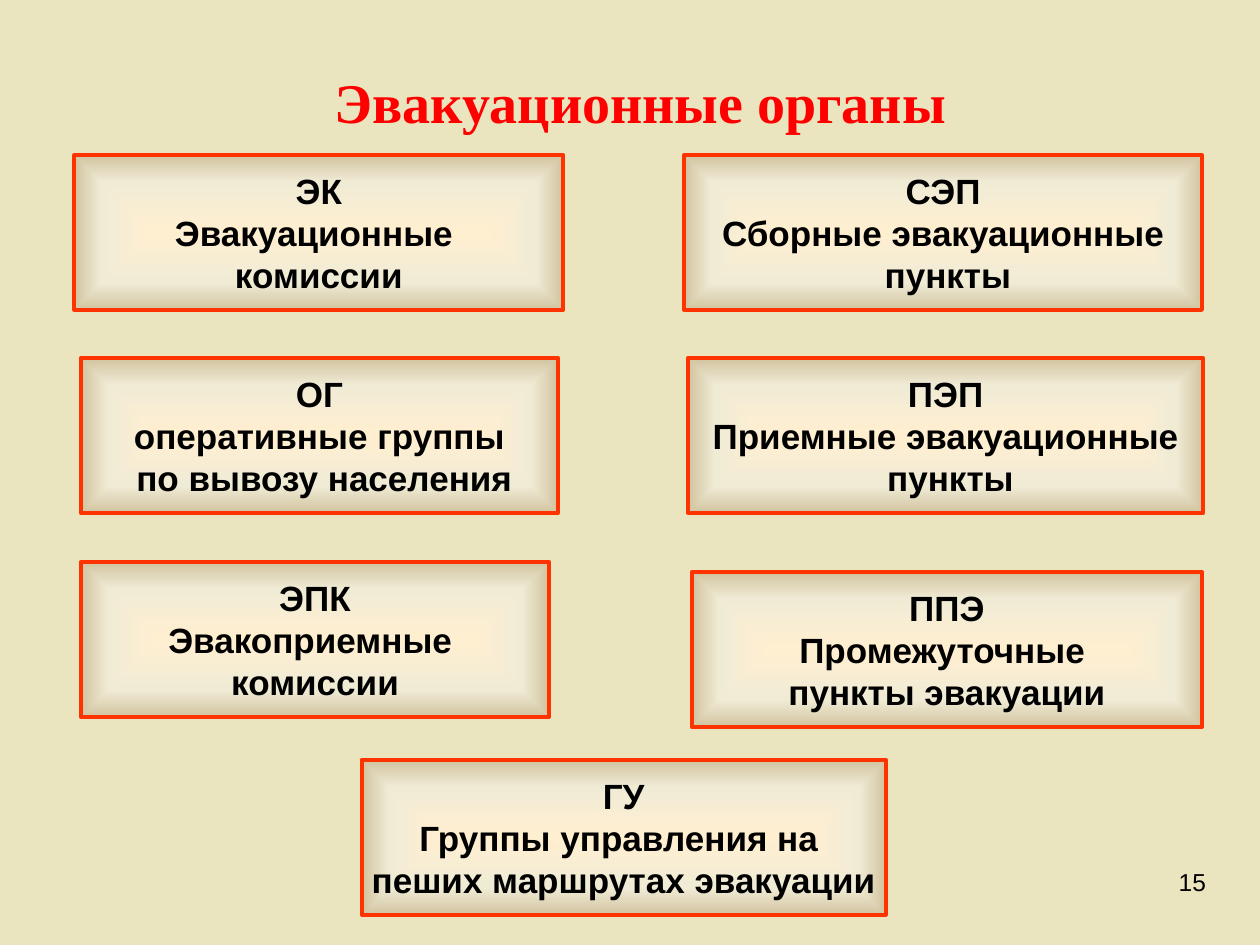
from pptx import Presentation
from pptx.dml.color import RGBColor
from pptx.enum.shapes import MSO_SHAPE
from pptx.enum.text import MSO_ANCHOR, PP_ALIGN
from pptx.oxml import parse_xml
from pptx.oxml.ns import nsdecls, qn
from pptx.util import Inches, Pt

BOX_HEIGHT = 1.23
GRADIENT = f"""<a:gradFill {nsdecls('a')} rotWithShape="1"><a:gsLst>
<a:gs pos="0"><a:srgbClr val="FFEFD1"/></a:gs>
<a:gs pos="65000"><a:srgbClr val="F0EBD5"/></a:gs>
<a:gs pos="100000"><a:srgbClr val="D1C39F"/></a:gs>
</a:gsLst><a:path path="shape">
<a:fillToRect l="50000" t="50000" r="50000" b="50000"/>
</a:path></a:gradFill>"""


def rgb(value):
    return RGBColor.from_string(value)


def write(tf, text, size=20, font="Arial", color="000000", bold=False,
          align=PP_ALIGN.CENTER, anchor=MSO_ANCHOR.MIDDLE, wrap=True):
    """Fill a text frame, one paragraph for each line of text."""
    tf.word_wrap = wrap
    tf.vertical_anchor = anchor
    for i, line in enumerate(text.split("\n")):
        p = tf.paragraphs[0] if i == 0 else tf.add_paragraph()
        p.alignment = align
        r = p.add_run()
        r.text = line
        r.font.size = Pt(size)
        r.font.name = font
        r.font.bold = bold
        r.font.color.rgb = rgb(color)


prs = Presentation()
prs.slide_width, prs.slide_height = Inches(10), Inches(7.5)
slide = prs.slides.add_slide(prs.slide_layouts[5])
slide.background.fill.solid()
slide.background.fill.fore_color.rgb = rgb("EBE5BF")

title = slide.shapes.title
title.left, title.top = Inches(0.5), Inches(0.27)
title.width, title.height = Inches(9.17), Inches(1.57)
title.text_frame.margin_bottom = Inches(0.55)
write(title.text_frame, "Эвакуационные органы", size=32,
      font="Times New Roman", color="FF0000", bold=True)

number = slide.shapes.add_textbox(Inches(7.59), Inches(6.83), Inches(2.08), Inches(0.52))
write(number.text_frame, "15", size=14, align=PP_ALIGN.RIGHT, anchor=MSO_ANCHOR.TOP)

# left, top, width, text
bodies = [
    (0.59, 1.23, 3.88, "ЭК\nЭвакуационные \nкомиссии"),
    (5.43, 1.23, 4.11, "СЭП\nСборные эвакуационные\n пункты"),
    (0.64, 2.84, 3.79, "ОГ\nоперативные группы\n по вывозу населения"),
    (5.46, 2.84, 4.09, "ПЭП\nПриемные эвакуационные\n пункты"),
    (0.64, 4.46, 3.72, "ЭПК\nЭвакоприемные \nкомиссии"),
    (5.49, 4.54, 4.05, "ППЭ\nПромежуточные \nпункты эвакуации"),
    (2.87, 6.03, 4.16, "ГУ\nГруппы управления на \nпеших маршрутах эвакуации"),
]
for left, top, width, text in bodies:
    sp = slide.shapes.add_shape(MSO_SHAPE.RECTANGLE, Inches(left), Inches(top),
                                Inches(width), Inches(BOX_HEIGHT))
    sp.shadow.inherit = False
    sp.line.color.rgb = rgb("FF3300")
    sp.line.width = Pt(2.25)
    sp._element.spPr.find(qn("a:prstGeom")).addnext(parse_xml(GRADIENT))
    write(sp.text_frame, text, bold=True, wrap=False)

prs.save("out.pptx")
